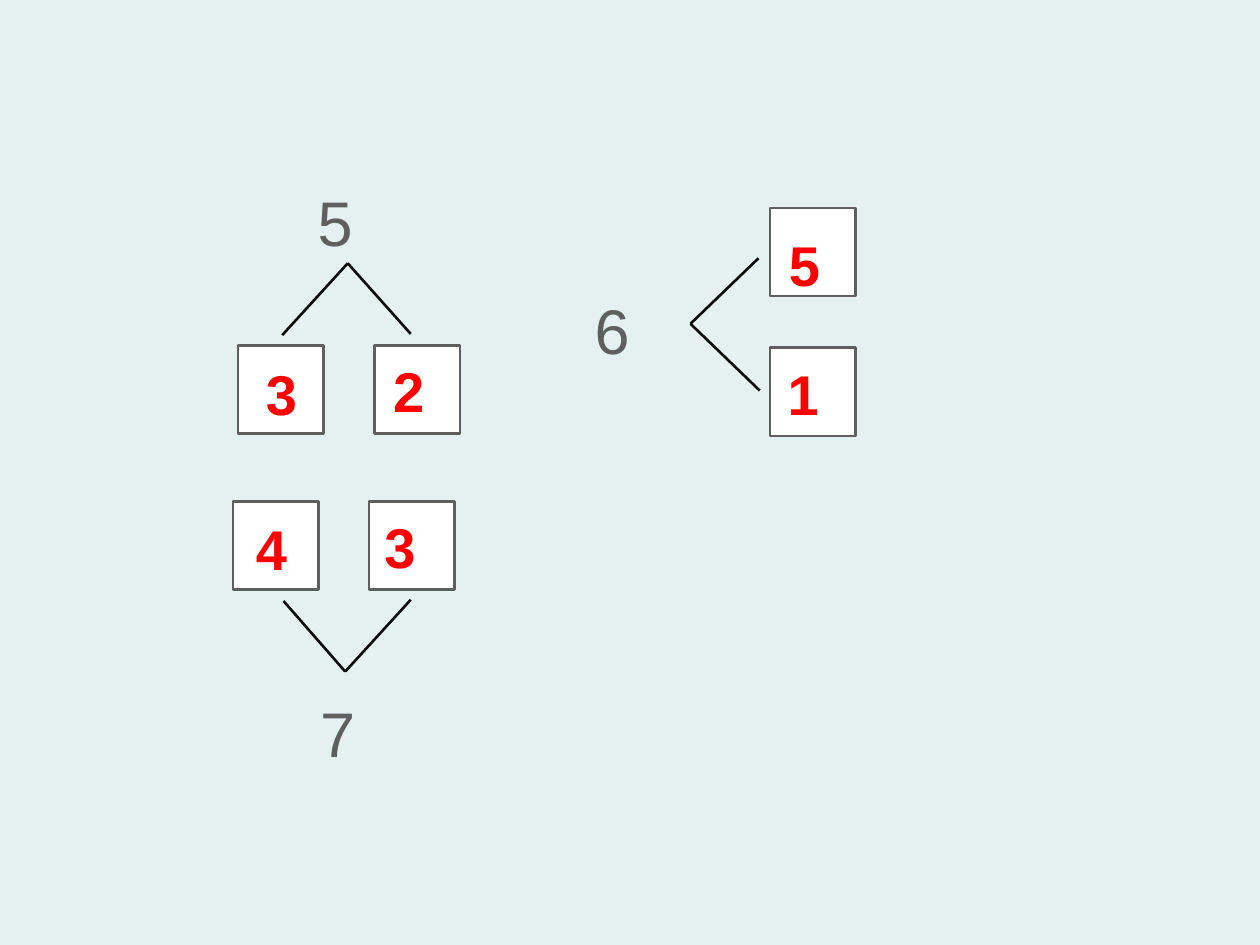
from dataclasses import dataclass

from lxml import etree
from pptx import Presentation
from pptx.dml.color import RGBColor
from pptx.enum import shapes, text
from pptx.oxml import ns
from pptx.util import Inches, Pt

Point = tuple[float, float]


@dataclass(frozen=True)
class Theme:
    back: RGBColor = RGBColor(0xE5, 0xF1, 0xF1)
    white: RGBColor = RGBColor(0xFF, 0xFF, 0xFF)
    gray: RGBColor = RGBColor(0x5F, 0x5F, 0x5F)
    black: RGBColor = RGBColor(0x0D, 0x0D, 0x0D)
    red: RGBColor = RGBColor(0xFF, 0x00, 0x00)
    font: str = "Arial"
    large: Pt = Pt(36)
    small: Pt = Pt(32)
    line: Pt = Pt(1.5)


THEME = Theme()
WHOLE = {"name": THEME.font, "size": THEME.large, "bold": False}
ADDEND = {"name": THEME.font, "size": THEME.small, "bold": True}
BOX = (0.68, 0.7)


@dataclass(frozen=True)
class Addend:
    digit: str
    box: Point
    label: Point
    end: Point


@dataclass(frozen=True)
class Bond:
    """A whole number joined at a tip to its two addends."""
    whole: str
    label: Point
    tip: Point
    pair: tuple[Addend, Addend]


BONDS = (
    Bond("5", (2.29, 1.37), (2.76, 2.09), (
        Addend("3", (1.89, 2.74), (1.87, 2.76), (2.24, 2.66)),
        Addend("2", (2.97, 2.74), (2.88, 2.74), (3.26, 2.65)))),
    Bond("6", (4.49, 2.22), (5.48, 2.57), (
        Addend("5", (6.11, 1.65), (6.02, 1.74), (6.02, 2.05)),
        Addend("1", (6.11, 2.76), (6.01, 2.76), (6.03, 3.1)))),
    Bond("7", (2.31, 5.42), (2.74, 5.33), (
        Addend("4", (1.85, 3.98), (1.79, 3.99), (2.25, 4.77)),
        Addend("3", (2.93, 3.98), (2.81, 3.98), (3.26, 4.76)))),
)


def label(tree, digit: str, at: Point, size: Point, look: dict,
          color: RGBColor, align, left: float = 0.1) -> None:
    frame = tree.add_textbox(*map(Inches, at + size)).text_frame
    form = {"word_wrap": True, "margin_left": Inches(left),
            "margin_top": Inches(0.09),
            "vertical_anchor": text.MSO_ANCHOR.TOP}
    for key, value in form.items():
        setattr(frame, key, value)
    para = frame.paragraphs[0]
    para.alignment = align
    run = para.add_run()
    run.text = digit
    for key, value in look.items():
        setattr(run.font, key, value)
    run.font.color.rgb = color


def square(tree, at: Point) -> None:
    box = tree.add_shape(shapes.MSO_SHAPE.RECTANGLE, *map(Inches, at + BOX))
    box.shadow.inherit = False
    box.fill.solid()
    box.fill.fore_color.rgb = THEME.white
    box.line.color.rgb = THEME.gray
    box.line.width = THEME.line


def branch(tree, tip: Point, end: Point) -> None:
    line = tree.add_connector(shapes.MSO_CONNECTOR.STRAIGHT,
                              *map(Inches, tip + end))
    line.line.color.rgb = THEME.black
    line.line.width = THEME.line
    etree.SubElement(line._element.spPr, ns.qn("a:effectLst"))


def draw(slide, bond: Bond) -> None:
    tree = slide.shapes.add_group_shape().shapes
    label(tree, bond.whole, bond.label, (0.99, 0.83), WHOLE, THEME.gray,
          text.PP_ALIGN.LEFT, left=0.23)
    for item in bond.pair:
        square(tree, item.box)
        branch(tree, bond.tip, item.end)
    for item in bond.pair:
        label(slide.shapes, item.digit, item.label, (0.73, 0.63), ADDEND,
              THEME.red, text.PP_ALIGN.CENTER)


def main() -> None:
    deck = Presentation()
    deck.slide_width, deck.slide_height = Inches(10), Inches(7.5)
    slide = deck.slides.add_slide(deck.slide_layouts[6])
    slide.background.fill.solid()
    slide.background.fill.fore_color.rgb = THEME.back
    for bond in BONDS:
        draw(slide, bond)
    deck.save("out.pptx")


if __name__ == "__main__":
    main()
